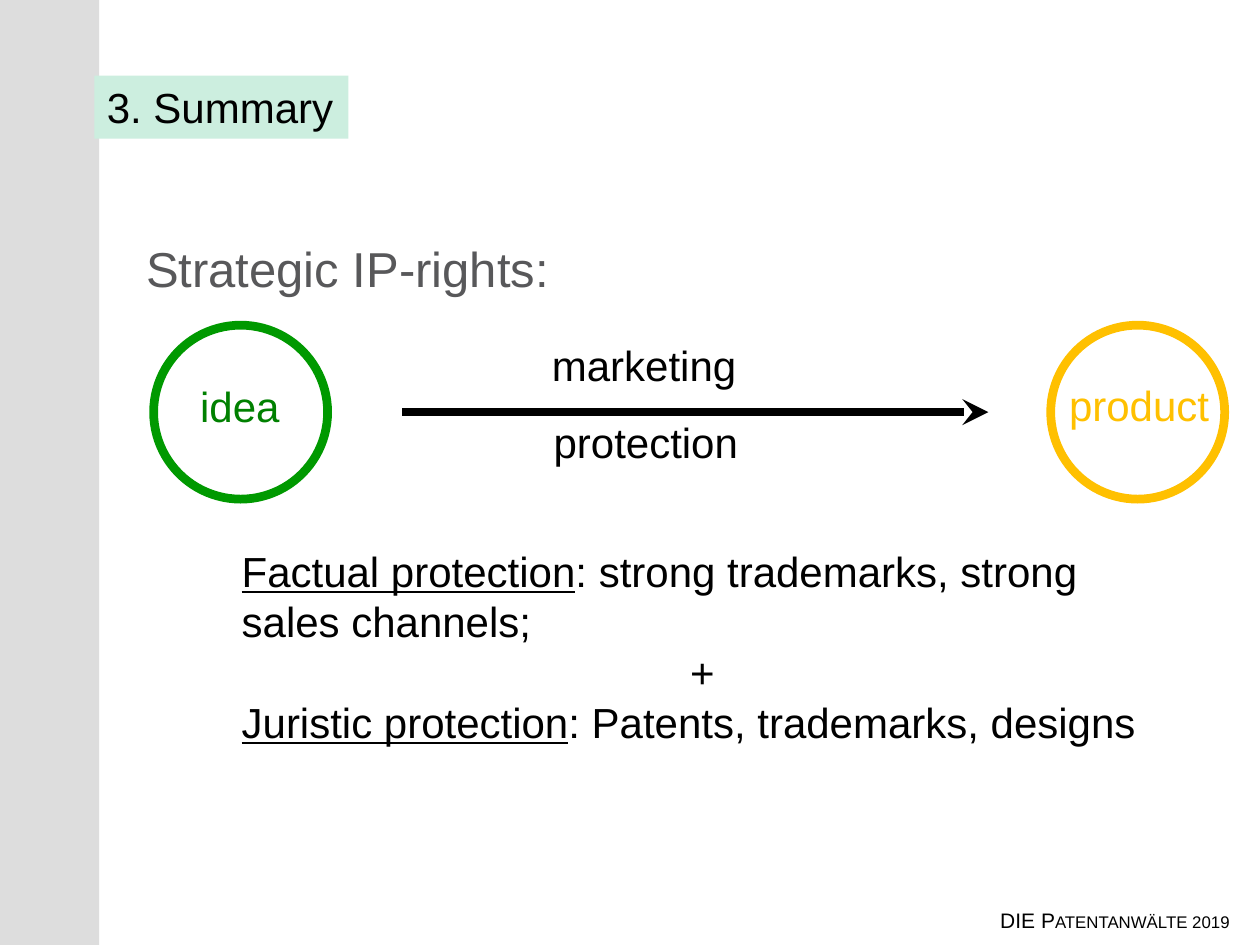
from dataclasses import dataclass

from lxml.etree import SubElement
from pptx import Presentation
from pptx.dml.color import RGBColor
from pptx.enum.shapes import MSO_CONNECTOR, MSO_SHAPE
from pptx.enum.text import MSO_AUTO_SIZE, PP_ALIGN
from pptx.oxml.ns import qn
from pptx.util import Pt


@dataclass(frozen=True)
class Theme:
    """Colours, font and sizes of the slide."""
    font: str = "Arial"
    black: str = "000000"
    band: str = "DDDDDD"
    mint: str = "CCEEDF"
    grey: str = "58585A"
    ring_green: str = "009900"
    text_green: str = "008000"
    amber: str = "FFC000"
    heading: int = 28
    body: int = 24
    footer: int = 12
    stroke: int = 5


THEME = Theme()


def colour(value):
    """Turn a hex string into a colour."""
    return RGBColor.from_string(value)


def add_run(paragraph, text, size=THEME.body, ink=THEME.black, underline=False, small_caps=False):
    """Append one formatted run."""
    run = paragraph.add_run()
    run.text = text
    run.font.name = THEME.font
    run.font.size = Pt(size)
    run.font.color.rgb = colour(ink)
    if underline:
        run.font.underline = True
    if small_caps:
        run._r.get_or_add_rPr().set("cap", "small")


def add_text_box(slide, left, top, width, height, wrap=True):
    """Add an empty text box that grows with its text."""
    shape = slide.shapes.add_textbox(Pt(left), Pt(top), Pt(width), Pt(height))
    shape.text_frame.word_wrap = wrap
    shape.text_frame.auto_size = MSO_AUTO_SIZE.SHAPE_TO_FIT_TEXT
    return shape


def add_label(slide, box, text, size=THEME.body, ink=THEME.black, wrap=True):
    """Add a text box holding a single run."""
    shape = add_text_box(slide, *box, wrap=wrap)
    add_run(shape.text_frame.paragraphs[0], text, size, ink)
    return shape


def add_side_band(slide, left, top, width, height):
    """Draw the grey band along the slide edge."""
    band = slide.shapes.add_shape(MSO_SHAPE.RECTANGLE, Pt(left), Pt(top), Pt(width), Pt(height))
    band.shadow.inherit = False
    band.fill.solid()
    band.fill.fore_color.rgb = colour(THEME.band)
    band.line.fill.background()


def add_title(slide, left, top, width, height):
    """Place the section title on its mint plate."""
    title = add_label(slide, (left, top, width, height), "3. Summary", wrap=False)
    title.fill.solid()
    title.fill.fore_color.rgb = colour(THEME.mint)


def add_ring(slide, left, top, diameter, ink):
    """Draw an unfilled circle."""
    ring = slide.shapes.add_shape(MSO_SHAPE.OVAL, Pt(left), Pt(top), Pt(diameter), Pt(diameter))
    ring.shadow.inherit = False
    ring.fill.background()
    ring.line.color.rgb = colour(ink)
    ring.line.width = Pt(THEME.stroke)


def add_arrow(slide, left, middle, width):
    """Draw a horizontal arrow pointing right."""
    arrow = slide.shapes.add_connector(
        MSO_CONNECTOR.STRAIGHT, Pt(left), Pt(middle), Pt(left + width), Pt(middle))
    arrow.line.color.rgb = colour(THEME.black)
    arrow.line.width = Pt(THEME.stroke)
    SubElement(arrow.line._get_or_add_ln(), qn("a:tailEnd"), type="stealth")
    SubElement(arrow._element.spPr, qn("a:effectLst"))


def add_process(slide, left, top, width, height):
    """Place the path from idea to product."""
    add_ring(slide, left, top, height, THEME.ring_green)
    add_ring(slide, left + width - height, top, height, THEME.amber)
    add_label(slide, (left + 19.5, top + 28, 60.5, 36), "idea", ink=THEME.text_green, wrap=False)
    add_label(slide, (left + width - 96, top + 27.5, 96, 36), "product", ink=THEME.amber, wrap=False)
    add_arrow(slide, left + 142, top + height / 2, 335)
    add_label(slide, (left + 220.5, top + 4.5, 177, 36), "marketing")
    add_label(slide, (left + 221.5, top + 48.5, 177, 36), "protection")


def add_protection_notes(slide, left, top, width, height):
    """List the two kinds of protection."""
    frame = add_text_box(slide, left, top, width, height).text_frame
    factual = frame.paragraphs[0]
    add_run(factual, "Factual protection", underline=True)
    add_run(factual, ": strong trademarks, strong sales channels;")
    plus = frame.add_paragraph()
    plus.alignment = PP_ALIGN.CENTER
    add_run(plus, "+")
    juristic = frame.add_paragraph()
    add_run(juristic, "Juristic protection", underline=True)
    add_run(juristic, ": Patents, trademarks, designs")


def add_footer(slide, left, top, width, height):
    """Place the firm name and year."""
    paragraph = add_text_box(slide, left, top, width, height, wrap=False).text_frame.paragraphs[0]
    add_run(paragraph, "DIE ", THEME.footer)
    add_run(paragraph, "Patentanwälte 2019", THEME.footer, small_caps=True)


def main():
    """Build and save the slide."""
    presentation = Presentation()
    presentation.slide_width = Pt(720)
    presentation.slide_height = Pt(540)
    slide = presentation.slides.add_slide(presentation.slide_layouts[6])
    add_side_band(slide, 0, 0, 56.7, 540)
    add_title(slide, 54, 43.2, 145.2, 36)
    add_footer(slide, 564.5, 515, 155.5, 21.6)
    add_label(slide, (76.5, 132.5, 623.5, 99.5), "Strategic IP-rights:", THEME.heading, THEME.grey)
    add_process(slide, 87.8, 185.8, 612, 99.4)
    add_protection_notes(slide, 131, 308.2, 540.7, 123.8)
    presentation.save("out.pptx")


if __name__ == "__main__":
    main()
